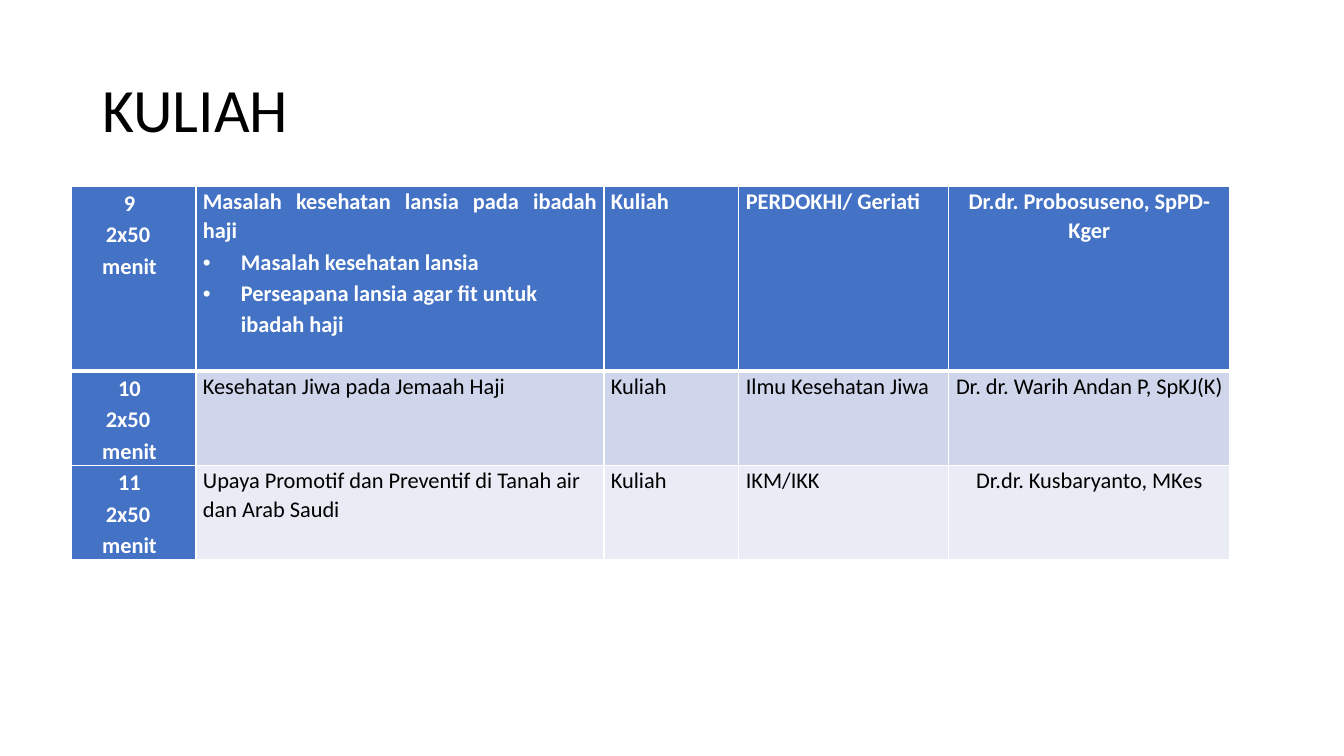
"""Build the KULIAH lecture schedule slide."""
import pptx
import pptx.dml.color
import pptx.enum.text
import pptx.oxml
import pptx.oxml.ns
import pptx.util

TITLE = "KULIAH"
DURATION = "2x50 menit"
LECTURES = [
    ("9", "Masalah kesehatan lansia pada ibadah haji",
     ["Masalah kesehatan lansia", "Perseapana lansia agar fit untuk ibadah haji"],
     "Kuliah", "PERDOKHI/ Geriati", "Dr.dr. Probosuseno, SpPD-Kger"),
    ("10", "Kesehatan Jiwa pada Jemaah Haji", [],
     "Kuliah", "Ilmu Kesehatan Jiwa", "Dr. dr. Warih Andan P, SpKJ(K)"),
    ("11", "Upaya Promotif dan Preventif di Tanah air dan Arab Saudi", [],
     "Kuliah", "IKM/IKK", "Dr.dr. Kusbaryanto, MKes"),
]
COLORS = {"black": "000000", "white": "FFFFFF", "blue": "4472C4",
          "band": "CFD5EA", "pale": "E9EBF5"}
ROW_FILLS = ["blue", "band", "pale"]
COLUMN_WIDTHS = [125, 408, 135, 210, 281]
ROW_HEIGHTS = [185, 94, 94]
TABLE_LEFT, TABLE_TOP = 71, 186
ALIGN = pptx.enum.text.PP_ALIGN
ANCHOR = pptx.enum.text.MSO_ANCHOR


def px(length):
    """Turn px into EMU."""
    return pptx.util.Emu(round(length * 914400 / 100.8))


def color(name):
    """Look up a named colour."""
    return pptx.dml.color.RGBColor.from_string(COLORS[name])


def write(frame, text, size=16, ink="black", bold=False, align=ALIGN.LEFT,
          spacing=1.07, left=0, first=0, right=0, bullet=False):
    """Put one formatted paragraph into a text frame."""
    paragraph = frame.paragraphs[0] if not frame.text else frame.add_paragraph()
    run = paragraph.add_run()
    run.text = text
    run.font.name = "Calibri"
    run.font.size = pptx.util.Pt(size)
    run.font.bold = bold
    run.font.color.rgb = color(ink)
    paragraph.alignment = align
    paragraph.line_spacing = spacing
    properties = paragraph._p.get_or_add_pPr()
    for key, length in (("marL", left), ("indent", first), ("marR", right)):
        properties.set(key, str(px(length)))
    if bullet:
        for tag in ('buFont typeface="Arial"', 'buChar char="•"'):
            properties.append(pptx.oxml.parse_xml(
                f'<a:{tag} {pptx.oxml.ns.nsdecls("a")}/>'))


def format_cell(cell, fill, top, bottom):
    """Set margins, fill and white borders of a cell."""
    cell.margin_left = cell.margin_right = px(7)
    cell.margin_top = cell.margin_bottom = 0
    cell.fill.solid()
    cell.fill.fore_color.rgb = color(fill)
    borders = (("lnL", 1), ("lnR", 1), ("lnT", top), ("lnB", bottom))
    for index, (side, width) in enumerate(borders):
        cell._tc.get_or_add_tcPr().insert(index, pptx.oxml.parse_xml(
            f'<a:{side} {pptx.oxml.ns.nsdecls("a")} w="{pptx.util.Pt(width)}">'
            f'<a:solidFill><a:srgbClr val="{COLORS["white"]}"/></a:solidFill>'
            f'</a:{side}>'))


def main():
    """Create the slide and save it."""
    presentation = pptx.Presentation()
    presentation.slide_width, presentation.slide_height = px(1344), px(756)
    slide = presentation.slides.add_slide(presentation.slide_layouts[5])

    title = slide.shapes.title
    title.left, title.top, title.width, title.height = map(px, (92, 40, 1159, 146))
    title.text_frame.vertical_anchor = ANCHOR.MIDDLE
    write(title.text_frame, TITLE, size=44, spacing=0.9)

    table = slide.shapes.add_table(
        len(LECTURES), len(COLUMN_WIDTHS), px(TABLE_LEFT), px(TABLE_TOP),
        px(sum(COLUMN_WIDTHS)), px(sum(ROW_HEIGHTS))).table
    table.first_col = True
    for column, width in zip(table.columns, COLUMN_WIDTHS):
        column.width = px(width)

    for index, (number, topic, points, kind, unit, lecturer) in enumerate(LECTURES):
        row = table.rows[index]
        row.height = px(ROW_HEIGHTS[index])
        is_header = index == 0
        for column, cell in enumerate(row.cells):
            format_cell(cell, ROW_FILLS[index] if column else "blue",
                        top=3 if index == 1 else 1, bottom=3 if is_header else 1)
        session, subject, *details = [cell.text_frame for cell in row.cells]
        strong = {"ink": "white", "bold": True}
        body = strong if is_header else {}
        for text, left, first in ((number, 20, -17), (DURATION, 3, -7)):
            write(session, text, align=ALIGN.CENTER, spacing=1.15,
                  left=left, first=first, right=11, **strong)
        write(subject, topic, align=ALIGN.JUSTIFY if points else ALIGN.LEFT, **body)
        for point in points:
            write(subject, point, spacing=1.15, left=38, first=-38, bullet=True, **body)
        for frame, text in zip(details, (kind, unit, lecturer)):
            write(frame, text, align=ALIGN.CENTER if text == lecturer else ALIGN.LEFT,
                  **body)

    presentation.save("out.pptx")


if __name__ == "__main__":
    main()
